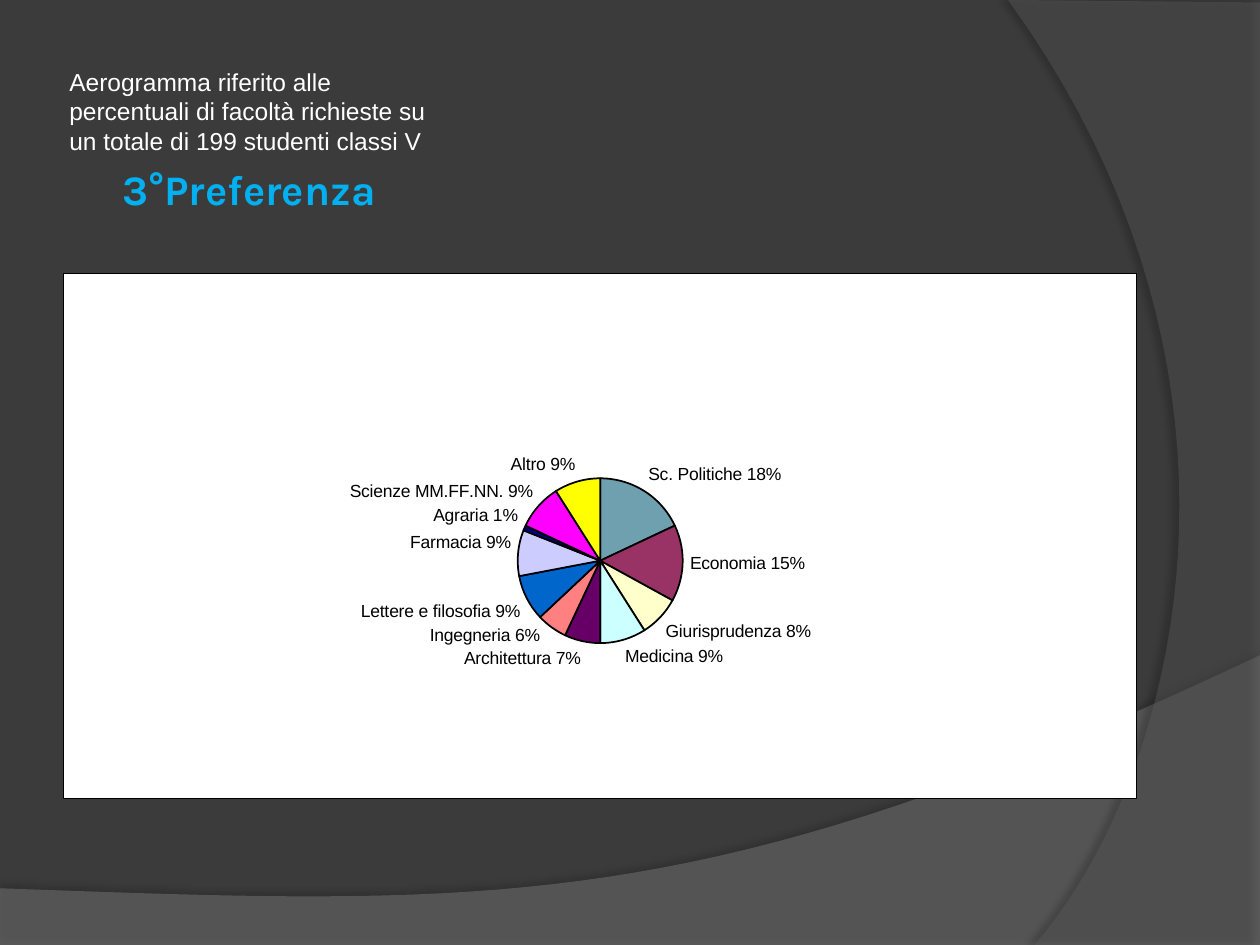
from lxml import etree
from pptx import Presentation
from pptx.chart.data import CategoryChartData
from pptx.dml.color import RGBColor
from pptx.enum.chart import XL_CHART_TYPE as ChartType, XL_LABEL_POSITION as LabelPosition
from pptx.enum.text import MSO_ANCHOR as Anchor, PP_ALIGN as Align
from pptx.oxml import parse_xml
from pptx.oxml.ns import nsdecls, qn
from pptx.util import Inches, Pt

BACKGROUND = RGBColor(0x3B, 0x3B, 0x3B)
WAVE_GREY = RGBColor(0x7F, 0x7F, 0x7F)
ARC_GREY = RGBColor(0x5E, 0x5E, 0x5E)
SKY_BLUE = RGBColor(0x00, 0xB0, 0xF0)
WHITE = RGBColor(0xFF, 0xFF, 0xFF)
BLACK = RGBColor(0x00, 0x00, 0x00)

# Faculty, percentage, slice colour
FACULTIES = [
    ("Sc. Politiche", 18, RGBColor(0x6E, 0xA0, 0xB0)),
    ("Economia", 15, RGBColor(0x99, 0x33, 0x66)),
    ("Giurisprudenza", 8, RGBColor(0xFF, 0xFF, 0xCC)),
    ("Medicina", 9, RGBColor(0xCC, 0xFF, 0xFF)),
    ("Architettura", 7, RGBColor(0x66, 0x00, 0x66)),
    ("Ingegneria", 6, RGBColor(0xFF, 0x80, 0x80)),
    ("Lettere e filosofia", 9, RGBColor(0x00, 0x66, 0xCC)),
    ("Farmacia", 9, RGBColor(0xCC, 0xCC, 0xFF)),
    ("Agraria", 1, RGBColor(0x00, 0x00, 0x80)),
    ("Scienze MM.FF.NN.", 9, RGBColor(0xFF, 0x00, 0xFF)),
    ("Altro", 9, RGBColor(0xFF, 0xFF, 0x00)),
]


def curve_points(start, control_1, control_2, end, steps=40):
    """Points along a cubic Bezier curve, both ends included."""
    points = []
    for step in range(steps + 1):
        t = step / steps
        weights = ((1 - t) ** 3, 3 * t * (1 - t) ** 2, 3 * t ** 2 * (1 - t), t ** 3)
        corners = (start, control_1, control_2, end)
        points.append(tuple(sum(w * corner[axis] for w, corner in zip(weights, corners))
                            for axis in (0, 1)))
    return points


def add_swoosh(slide, points, color, opacity, shadow_opacity, distance, angle):
    """Translucent background shape with a soft shadow."""
    outline = [(Inches(x), Inches(y)) for x, y in points]
    builder = slide.shapes.build_freeform(*outline[0])
    builder.add_line_segments(outline[1:], close=True)
    shape = builder.convert_to_shape()
    shape.fill.solid()
    shape.fill.fore_color.rgb = color
    shape.line.fill.background()
    properties = shape.element.spPr
    color_node = properties.find(qn("a:solidFill")).find(qn("a:srgbClr"))
    etree.SubElement(color_node, qn("a:alpha"), val=str(opacity * 1000))
    properties.append(parse_xml(
        f'<a:effectLst {nsdecls("a")}><a:outerShdw blurRad="{Pt(4)}" dist="{Pt(distance)}"'
        f' dir="{angle * 60000}" algn="ctr" rotWithShape="0"><a:srgbClr val="{BLACK}">'
        f'<a:alpha val="{shadow_opacity * 1000}"/></a:srgbClr></a:outerShdw></a:effectLst>'))


def fill_placeholder(box, area, text, font_name, size, color, bold, anchor, indent=0):
    """Move a placeholder and give it one left-aligned paragraph without a bullet."""
    box.left, box.top, box.width, box.height = map(Inches, area)
    frame = box.text_frame
    frame.text = text
    frame.word_wrap = True
    frame.vertical_anchor = anchor
    frame.margin_left = frame.margin_right = Inches(0.05)
    frame.margin_top = frame.margin_bottom = 0
    para = frame.paragraphs[0]
    para.alignment = Align.LEFT
    para.font.name, para.font.size, para.font.bold = font_name, Pt(size), bold
    para.font.color.rgb = color
    settings = para._p.get_or_add_pPr()
    settings.set("marL", str(Inches(indent)))
    settings.set("indent", "0")
    settings.insert(0, parse_xml(f'<a:buNone {nsdecls("a")}/>'))


def frame_chart(chart):
    """White bordered chart area and a fixed inner plot area."""
    chart_node = chart.element.find(qn("c:chart"))
    chart_node.addnext(parse_xml(
        f'<c:spPr {nsdecls("c", "a")}><a:solidFill><a:srgbClr val="{WHITE}"/></a:solidFill>'
        f'<a:ln w="{Pt(0.25)}"><a:solidFill><a:srgbClr val="{BLACK}"/></a:solidFill></a:ln>'
        '</c:spPr>'))
    plot_area = chart_node.find(qn("c:plotArea"))
    for layout in plot_area.findall(qn("c:layout")):
        plot_area.remove(layout)
    sizes = "".join(f'<c:{key} val="{value}"/>' for key, value in
                    (("x", 0.285), ("y", 0.39), ("w", 0.431), ("h", 0.314)))
    plot_area.insert(0, parse_xml(
        f'<c:layout {nsdecls("c")}><c:manualLayout><c:layoutTarget val="inner"/>'
        f'<c:xMode val="edge"/><c:yMode val="edge"/>{sizes}</c:manualLayout></c:layout>'))


def set_font(font):
    font.name, font.size = "Arial", Pt(10)
    font.color.rgb = BLACK


def add_faculty_pie(slide):
    data = CategoryChartData()
    data.categories = [name for name, _, _ in FACULTIES]
    data.add_series("Series 1", [value for _, value, _ in FACULTIES])
    area = map(Inches, (0.5, 2.17, 8.52, 4.17))
    chart = slide.shapes.add_chart(ChartType.PIE, *area, data).chart
    chart.has_legend = False
    chart.has_title = False
    set_font(chart.font)
    frame_chart(chart)

    # Slices
    plot = chart.plots[0]
    plot.vary_by_categories = True
    for index, (_, _, color) in enumerate(FACULTIES):
        slice_format = plot.series[0].points[index].format
        slice_format.fill.solid()
        slice_format.fill.fore_color.rgb = color
        slice_format.line.color.rgb = BLACK
        slice_format.line.width = Pt(1)

    # Labels: category and percentage on one line
    labels = plot.series[0].data_labels
    labels.show_category_name = labels.show_percentage = True
    labels.show_value = False
    labels.number_format = "0%"
    labels.number_format_is_linked = False
    labels.position = LabelPosition.BEST_FIT
    set_font(labels.font)
    percent = labels._element.find(qn("c:showBubbleSize"))
    if percent is None:
        percent = labels._element.find(qn("c:showPercent"))
    separator = parse_xml(f'<c:separator {nsdecls("c")}> </c:separator>')
    percent.addnext(separator)


def main():
    deck = Presentation()
    deck.slide_width, deck.slide_height = Inches(10), Inches(7.5)
    slide = deck.slides.add_slide(deck.slide_layouts[1])
    slide.background.fill.solid()
    slide.background.fill.fore_color.rgb = BACKGROUND

    # Background swooshes
    wave = [(0, 7.51), (10, 7.51)] + curve_points((10, 5.2), (5.59, 7.29), (3.91, 7.19), (0, 7.05))
    arc = [(10, 0.02), (10, 7.5)] + curve_points((8.21, 7.5), (9.35, 6.19), (10.18, 3), (8, 0))
    add_swoosh(slide, wave, WAVE_GREY, 45, 35, 3.5, 270)
    add_swoosh(slide, arc, ARC_GREY, 40, 45, 4, 180)

    # Heading and description
    fill_placeholder(slide.shapes.title, (0.5, 1.3, 3.5, 0.8), "3°Preferenza",
                     "Karla", 24, SKY_BLUE, True, Anchor.TOP, indent=0.42)
    fill_placeholder(slide.placeholders[1], (0.5, 0.23, 3, 1),
                     "Aerogramma riferito alle percentuali di facoltà richieste su "
                     "un totale di 199 studenti classi V",
                     "Arial", 14, WHITE, False, Anchor.BOTTOM)

    add_faculty_pie(slide)
    deck.save("out.pptx")


if __name__ == "__main__":
    main()
